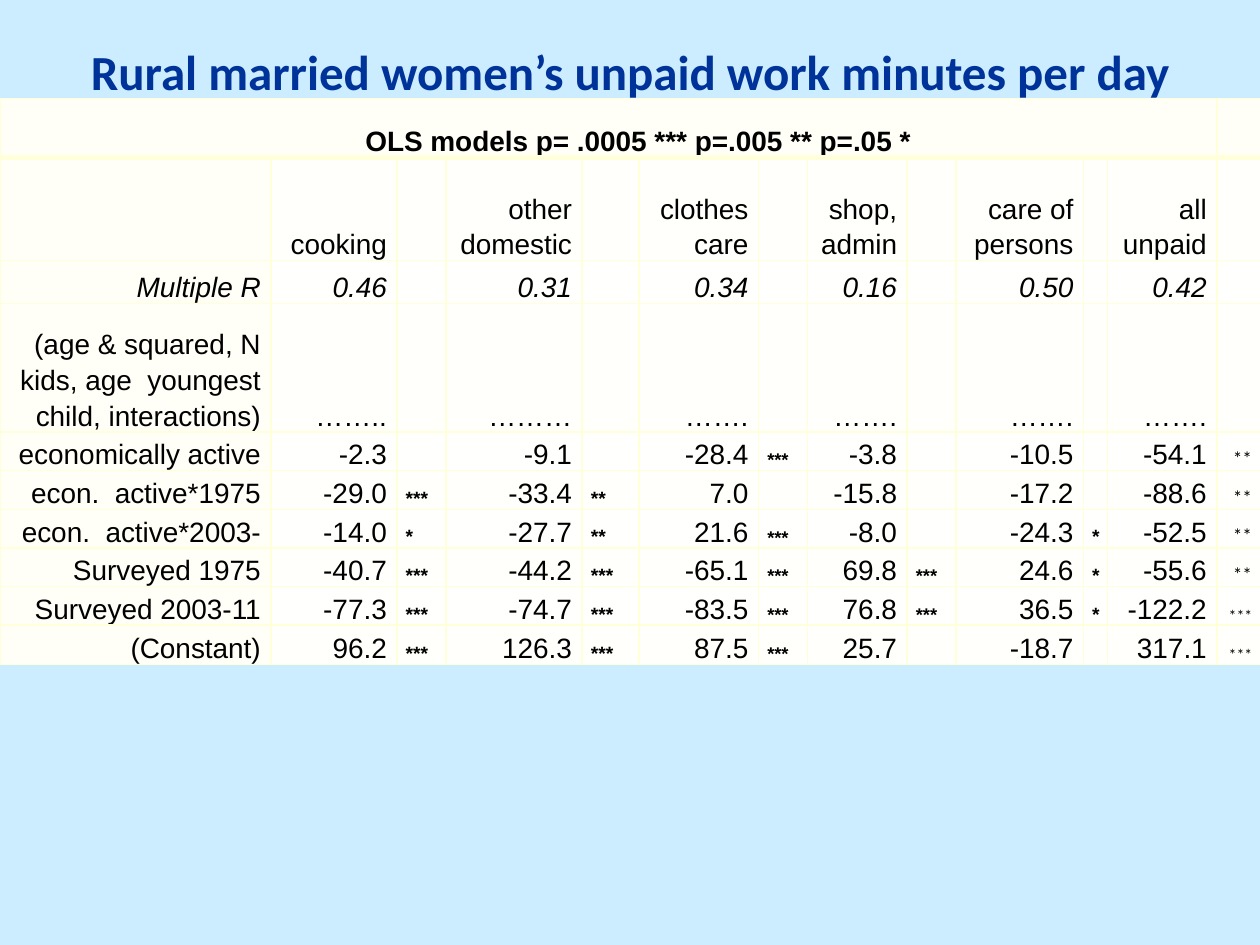
from dataclasses import dataclass

from lxml.etree import SubElement
from pptx import Presentation
from pptx.dml.color import RGBColor
from pptx.enum.text import MSO_ANCHOR as Anchor, PP_ALIGN as Align
from pptx.oxml.ns import qn
from pptx.util import Inches, Pt


@dataclass(frozen=True)
class Theme:
    background: str = "CCECFF"
    title: str = "003399"
    ink: str = "000000"
    border: str = "FFFFD9"
    label_fill: str = "FFFFF7"
    row_fills: tuple = ("FFFFFD", "FFFFFC")
    title_font: str = "Calibri"
    body_font: str = "Arial"
    title_size: float = 28
    body_size: float = 16
    star_size: float = 11
    narrow_star_size: float = 10.5
    small_star_size: float = 9
    line_spacing: float = 1.15


THEME = Theme()

TITLE = "Rural married women’s unpaid work minutes per day"
CAPTION = "OLS models p= .0005 *** p=.005 ** p=.05 *"
CAPTION_INDENT = Inches(2.83)
COLUMN_WIDTHS = [2.15, 1, 0.39, 1.08, 0.45, 0.95, 0.39, 0.79, 0.39, 1.01, 0.18, 0.87, 0.36]
ROW_HEIGHTS = [0.47, 0.82, 0.34, 1.02, 0.3, 0.3, 0.29, 0.29, 0.29, 0.31]
NARROW_STAR_COLUMNS = (6, 8)
LAST_COLUMN = len(COLUMN_WIDTHS) - 1
MULTIPLE_R_ROW = 2

# Each row: label, then the estimate and its significance stars for each model.
MODEL_ROWS = [
    ["", "cooking", "", "other domestic", "", "clothes care", "",
     "shop, admin", "", "care of\npersons", "", "all unpaid", ""],
    ["Multiple R", "0.46", "", "0.31", "", "0.34", "", "0.16", "", "0.50", "", "0.42", ""],
    ["(age & squared, N kids, age  youngest child, interactions)",
     "……..", "", "………", "", "…….", "", "…….", "", "…….", "", "…….", ""],
    ["economically active", "-2.3", "", "-9.1", "", "-28.4", "***",
     "-3.8", "", "-10.5", "", "-54.1", "**"],
    ["econ.  active*1975", "-29.0", "***", "-33.4", "**", "7.0", "",
     "-15.8", "", "-17.2", "", "-88.6", "**"],
    ["econ.  active*2003-", "-14.0", "*", "-27.7", "**", "21.6", "***",
     "-8.0", "", "-24.3", "*", "-52.5", "**"],
    ["Surveyed 1975", "-40.7", "***", "-44.2", "***", "-65.1", "***",
     "69.8", "***", "24.6", "*", "-55.6", "**"],
    ["Surveyed 2003-11", "-77.3", "***", "-74.7", "***", "-83.5", "***",
     "76.8", "***", "36.5", "*", "-122.2", "***"],
    ["(Constant)", "96.2", "***", "126.3", "***", "87.5", "***",
     "25.7", "", "-18.7", "", "317.1", "***"],
]


def set_end_mark(paragraph, size, font=THEME.body_font):
    """Size the paragraph mark, which otherwise stretches the table row."""
    mark = SubElement(paragraph._p, qn("a:endParaRPr"), sz=str(int(size * 100)))
    SubElement(mark, qn("a:latin"), typeface=font)


def write(frame, text, size, font=THEME.body_font, color=THEME.ink,
          align=Align.LEFT, bold=False, italic=False):
    frame.text = text
    for paragraph in frame.paragraphs:
        paragraph.alignment = align
        paragraph.line_spacing = THEME.line_spacing
        for run in paragraph.runs:
            run.font.size = Pt(size)
            run.font.name = font
            run.font.bold = bold
            run.font.italic = italic
            run.font.color.rgb = RGBColor.from_string(color)
        set_end_mark(paragraph, size, font)


def shrink_empty_line(cell):
    set_end_mark(cell.text_frame.paragraphs[0], THEME.star_size)


def set_borders(cell, bottom_width=1):
    properties = cell._tc.get_or_add_tcPr()
    widths = {"a:lnL": 1, "a:lnR": 1, "a:lnT": 1, "a:lnB": bottom_width}
    for position, (side, width) in enumerate(widths.items()):
        line = SubElement(properties, qn(side), w=str(Pt(width)))
        fill = SubElement(line, qn("a:solidFill"))
        SubElement(fill, qn("a:srgbClr"), val=THEME.border)
        properties.insert(position, line)


def style_cell(cell, fill, bottom_width=1):
    cell.vertical_anchor = Anchor.BOTTOM
    cell.margin_left = Inches(0.07)
    cell.margin_right = Inches(0.08)
    cell.margin_top = cell.margin_bottom = 0
    cell.fill.solid()
    cell.fill.fore_color.rgb = RGBColor.from_string(fill)
    set_borders(cell, bottom_width)


def write_stars(frame, stars, column):
    if column == LAST_COLUMN:
        size = THEME.small_star_size if stars == "***" else THEME.star_size
        write(frame, stars, size, font=THEME.title_font, align=Align.RIGHT)
    else:
        narrow = column in NARROW_STAR_COLUMNS
        size = THEME.narrow_star_size if narrow else THEME.star_size
        write(frame, stars, size, bold=True)


def add_caption_row(table):
    for column in range(len(COLUMN_WIDTHS)):
        style_cell(table.cell(0, column), THEME.label_fill, bottom_width=3)
        if column:
            shrink_empty_line(table.cell(0, column))
    caption = table.cell(0, 0)
    caption.merge(table.cell(0, LAST_COLUMN - 1))
    write(caption.text_frame, CAPTION, THEME.body_size, bold=True)
    indent = caption.text_frame.paragraphs[0]._p.get_or_add_pPr()
    indent.set("marL", str(CAPTION_INDENT))
    indent.set("indent", "0")


def add_model_row(table, row, entries):
    for column, entry in enumerate(entries):
        cell = table.cell(row, column)
        style_cell(cell, THEME.row_fills[row % 2] if column else THEME.label_fill)
        if not entry:
            shrink_empty_line(cell)
        elif set(entry) == {"*"}:
            write_stars(cell.text_frame, entry, column)
        else:
            write(cell.text_frame, entry, THEME.body_size, align=Align.RIGHT,
                  italic=row == MULTIPLE_R_ROW)


def add_results_table(slide):
    table = slide.shapes.add_table(
        len(ROW_HEIGHTS), len(COLUMN_WIDTHS), 0, Inches(0.78),
        Inches(sum(COLUMN_WIDTHS)), Inches(sum(ROW_HEIGHTS))).table
    table.first_row = table.horz_banding = False
    for column, width in zip(table.columns, COLUMN_WIDTHS):
        column.width = Inches(width)
    for row, height in zip(table.rows, ROW_HEIGHTS):
        row.height = Inches(height)
    add_caption_row(table)
    for row, entries in enumerate(MODEL_ROWS, start=1):
        add_model_row(table, row, entries)


def add_title(slide):
    frame = slide.shapes.add_textbox(0, Inches(0.13), Inches(10), Inches(0.79)).text_frame
    frame.word_wrap = True
    frame.vertical_anchor = Anchor.MIDDLE
    write(frame, TITLE, THEME.title_size, font=THEME.title_font, color=THEME.title,
          align=Align.CENTER, bold=True)


def main():
    deck = Presentation()
    deck.slide_width, deck.slide_height = Inches(10), Inches(7.5)
    slide = deck.slides.add_slide(deck.slide_layouts[6])
    slide.background.fill.solid()
    slide.background.fill.fore_color.rgb = RGBColor.from_string(THEME.background)
    add_title(slide)
    add_results_table(slide)
    deck.save("out.pptx")


if __name__ == "__main__":
    main()
